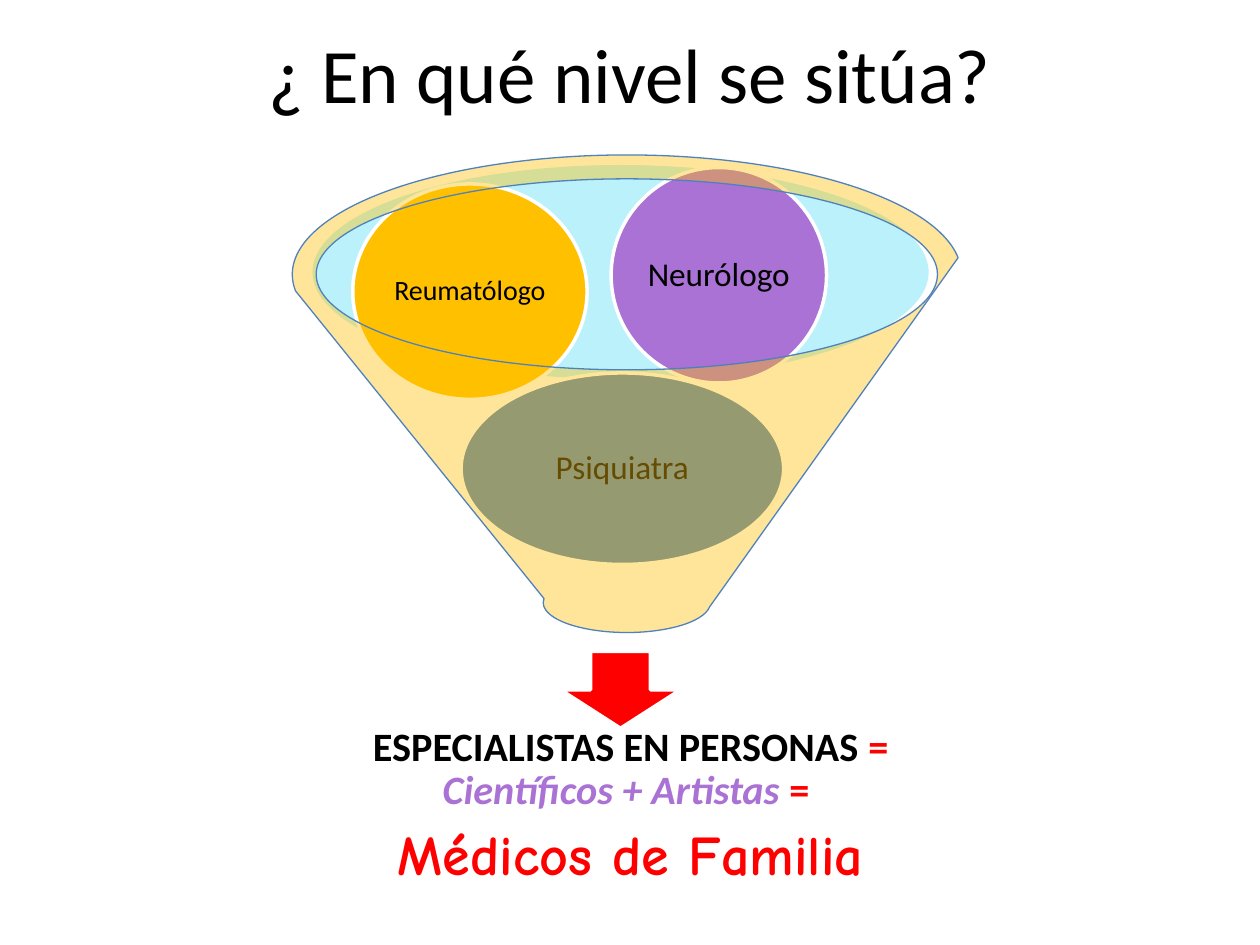
import dataclasses

import lxml.etree
import pptx
import pptx.dml.color
import pptx.enum.shapes
import pptx.enum.text
import pptx.oxml.ns
import pptx.util

Inches = pptx.util.Inches
Pt = pptx.util.Pt
Kind = pptx.enum.shapes.MSO_SHAPE
Align = pptx.enum.text.PP_ALIGN
Anchor = pptx.enum.text.MSO_ANCHOR


@dataclasses.dataclass(frozen=True)
class Theme:
    font: str = "Calibri"
    script: str = "Comic Neue"
    black: str = "000000"
    white: str = "FFFFFF"
    red: str = "FF0000"
    gold: str = "FFC000"
    purple: str = "AA72D4"
    blue: str = "4F81BD"
    cyan: str = "57DCF7"
    title: int = 44
    family: int = 32
    body: int = 23
    large: int = 19
    small: int = 16
    edge: float = 2
    thin: float = 0.75
    alpha: int = 40


@dataclasses.dataclass
class Span:
    text: str
    size: int
    color: str
    font: str = Theme.font
    bold: bool = False
    italic: bool = False


def rgb(color):
    return pptx.dml.color.RGBColor.from_string(color)


class Builder:
    def __init__(self, slide, theme):
        self.slide = slide
        self.theme = theme

    def fill_text(self, frame, lines, inset):
        """Fill a frame with centred lines, each a list of spans."""
        frame.vertical_anchor = Anchor.MIDDLE
        frame.margin_left = frame.margin_right = Inches(inset)
        frame.margin_top = frame.margin_bottom = Inches(inset)
        for index, spans in enumerate(lines):
            para = frame.paragraphs[0] if index == 0 else frame.add_paragraph()
            para.alignment = Align.CENTER
            para.line_spacing = 0.9
            para.space_after = Pt(round(0.35 * spans[0].size))
            for span in spans:
                run = para.add_run()
                run.text = span.text
                font = run.font
                font.name, font.size = span.font, Pt(span.size)
                font.bold, font.italic = span.bold, span.italic
                font.color.rgb = rgb(span.color)

    def title(self, text, *box):
        shape = self.slide.shapes.title
        shape.left, shape.top, shape.width, shape.height = map(Inches, box)
        frame = shape.text_frame
        frame.text = text
        frame.vertical_anchor = Anchor.MIDDLE
        para = frame.paragraphs[0]
        para.alignment = Align.CENTER
        font = para.runs[0].font
        font.name, font.size = self.theme.font, Pt(self.theme.title)
        font.color.rgb = rgb(self.theme.black)

    def shape(self, kind, box, fill, line=None, width=0, alpha=None):
        """Add a preset shape; alpha is its opacity in percent."""
        shape = self.slide.shapes.add_shape(kind, *map(Inches, box))
        shape.shadow.inherit = False
        shape.fill.solid()
        shape.fill.fore_color.rgb = rgb(fill)
        if alpha is not None:
            tag = pptx.oxml.ns.qn("a:srgbClr")
            color = next(shape.element.spPr.iter(tag))
            node = lxml.etree.SubElement(color, pptx.oxml.ns.qn("a:alpha"))
            node.set("val", str(alpha * 1000))
        if line:
            shape.line.color.rgb = rgb(line)
            shape.line.width = Pt(width)
        else:
            shape.line.fill.background()
        return shape

    def ball(self, label, box, fill, size):
        theme = self.theme
        ball = self.shape(Kind.OVAL, box, fill, theme.white, theme.edge)
        ball.text_frame.word_wrap = False
        self.fill_text(ball.text_frame, [[Span(label, size, theme.black)]], 0.03)

    def text(self, lines, box, inset):
        frame = self.slide.shapes.add_textbox(*map(Inches, box)).text_frame
        frame.word_wrap = True
        self.fill_text(frame, lines, inset)


def main():
    deck = pptx.Presentation()
    deck.slide_width, deck.slide_height = Inches(10), Inches(7.5)
    theme = Theme()
    page = Builder(deck.slides.add_slide(deck.slide_layouts[5]), theme)

    page.title("¿ En qué nivel se sitúa?", 0.5, 0, 9, 1.15)
    page.shape(Kind.OVAL, (2.48, 1.31, 4.89, 1.7), theme.cyan, alpha=theme.alpha)
    page.shape(Kind.DOWN_ARROW, (4.45, 5.17, 0.95, 0.61), theme.red,
               theme.white, theme.edge)

    equals = Span("= ", theme.body, theme.red, bold=True)
    page.text([
        [Span("ESPECIALISTAS EN PERSONAS ", theme.body, theme.black, bold=True),
         equals,
         Span("Científicos + Artistas ", theme.body, theme.purple,
              bold=True, italic=True),
         equals],
        [Span("Médicos de Familia", theme.family, theme.red, theme.script,
              bold=True)],
    ], (2.73, 5.48, 4.55, 1.85), 0.18)

    balls = [
        ("Psiquiatra", (3.66, 2.96, 2.56, 1.52), theme.blue, theme.large),
        ("Reumatólogo", (2.8, 1.46, 1.86, 1.71), theme.gold, theme.small),
        ("Neurólogo", (4.85, 1.33, 1.71, 1.71), theme.purple, theme.large),
    ]
    for ball in balls:
        page.ball(*ball)

    page.shape(Kind.FUNNEL, (2.32, 1.23, 5.31, 3.79), theme.gold,
               theme.blue, theme.thin, theme.alpha)
    deck.save("out.pptx")


if __name__ == "__main__":
    main()
